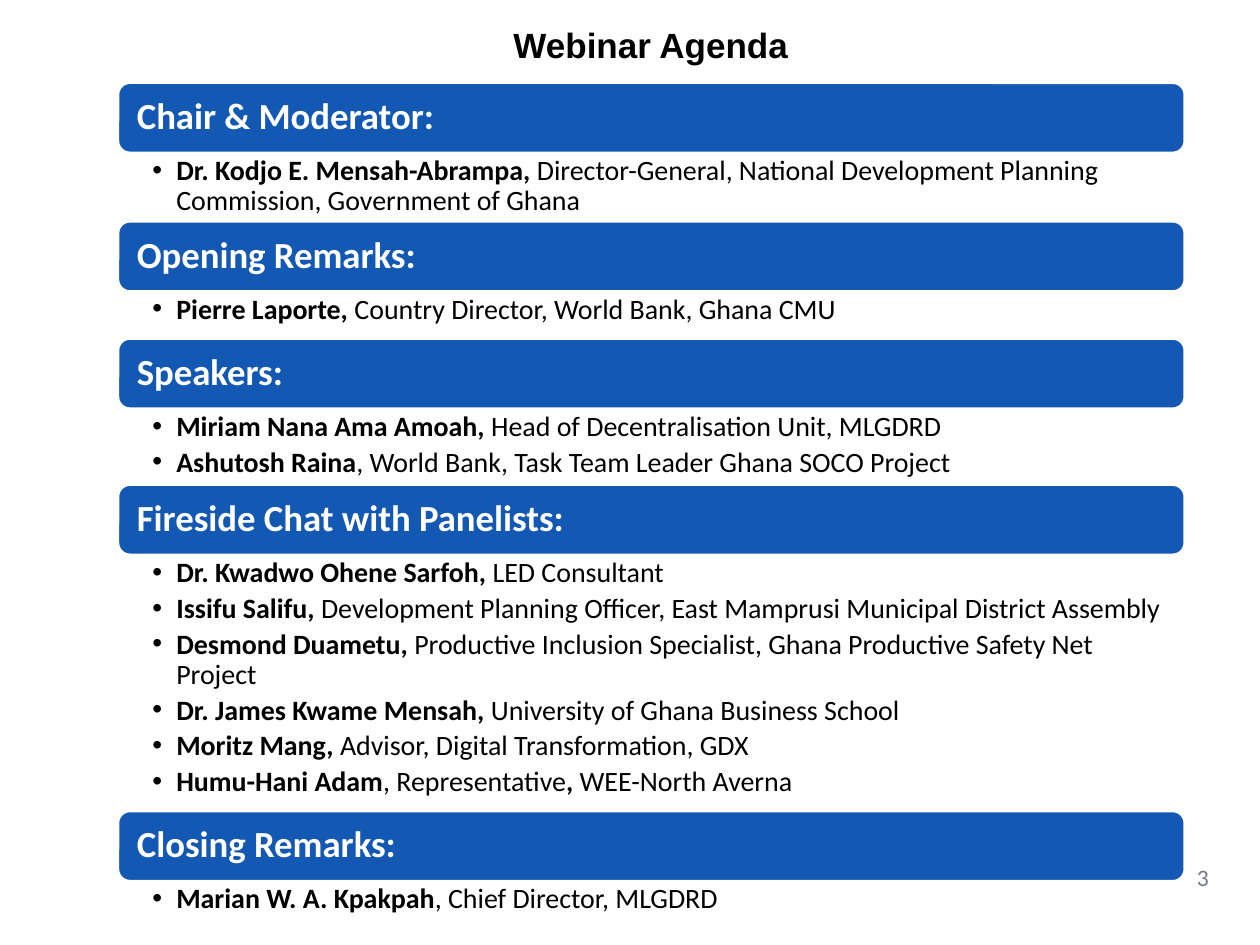
"""Build the webinar agenda slide: five headed sections with bulleted names."""
from dataclasses import dataclass

from lxml import etree
from pptx import Presentation
from pptx.dml.color import RGBColor
from pptx.enum.shapes import MSO_SHAPE
from pptx.enum.text import MSO_ANCHOR, MSO_AUTO_SIZE, PP_ALIGN
from pptx.oxml.ns import qn
from pptx.util import Pt

ROUNDED = MSO_SHAPE.ROUNDED_RECTANGLE
TOP, MIDDLE = MSO_ANCHOR.TOP, MSO_ANCHOR.MIDDLE
LEFT, CENTER = PP_ALIGN.LEFT, PP_ALIGN.CENTER
NO_FIT = MSO_AUTO_SIZE.NONE

COLORS = {"bar": "1359B4", "white": "FFFFFF", "text": "000000", "number": "747993"}
COMPARISON_LAYOUT = 4
SECTION_LEFT, SECTION_TOP, SECTION_WIDTH = 67.7, 47.5, 609.1
BAR_HEIGHT = 39.6
BULLET_INDENT = 13.7


@dataclass
class Section:
    """A heading, its list height, and entries of alternating bold and plain text."""
    heading: str
    list_height: float
    entries: list[tuple[str, ...]]


SECTIONS = [
    Section("Chair & Moderator:", 39.6, [
        ("Dr. Kodjo E. Mensah-Abrampa,",
         " Director-General, National Development Planning Commission, Government of Ghana"),
    ]),
    Section("Opening Remarks:", 27.4, [
        ("Pierre Laporte, ", "Country Director, World Bank, Ghana CMU"),
    ]),
    Section("Speakers:", 43.9, [
        ("Miriam Nana Ama Amoah, ", "Head of Decentralisation Unit, MLGDRD"),
        ("Ashutosh Raina", ", World Bank, Task Team Leader Ghana SOCO Project"),
    ]),
    Section("Fireside Chat with Panelists:", 146.9, [
        ("Dr. Kwadwo Ohene Sarfoh,", " LED Consultant"),
        ("Issifu Salifu,",
         " Development Planning Officer, East Mamprusi Municipal District Assembly"),
        ("Desmond Duametu,",
         " Productive Inclusion Specialist, Ghana Productive Safety Net Project"),
        ("Dr. James Kwame Mensah,", " University of Ghana Business School"),
        ("Moritz Mang, ", "Advisor, Digital Transformation, GDX"),
        ("Humu-Hani Adam", ", Representative", ",", " WEE-North Averna"),
    ]),
    Section("Closing Remarks:", 27.4, [
        ("Marian W. A. Kpakpah", ", Chief Director, MLGDRD"),
    ]),
]


def color(name: str) -> RGBColor:
    """Return a named colour."""
    return RGBColor.from_string(COLORS[name])


def place(box, left: float, top: float, width: float, height: float) -> None:
    """Move and size a box, in points."""
    box.left, box.top, box.width, box.height = map(Pt, (left, top, width, height))


def set_frame(box, anchor, left: float, top: float, right: float, bottom: float):
    """Set anchor and margins, and return the text frame."""
    frame = box.text_frame
    frame.word_wrap = True
    frame.auto_size = NO_FIT
    frame.vertical_anchor = anchor
    frame.margin_left, frame.margin_top = Pt(left), Pt(top)
    frame.margin_right, frame.margin_bottom = Pt(right), Pt(bottom)
    return frame


def add_span(para, text: str, size: float, tint: str, bold: bool = False,
             font: str = "Calibri") -> None:
    """Add one formatted run."""
    span = para.add_run()
    span.text = text
    span.font.name, span.font.size, span.font.bold = font, Pt(size), bold
    span.font.color.rgb = color(tint)


def set_bullet(para) -> None:
    """Give a paragraph a round bullet with a hanging indent."""
    properties = para._p.get_or_add_pPr()
    properties.set("marL", str(Pt(BULLET_INDENT)))
    properties.set("indent", str(-Pt(BULLET_INDENT)))
    tint = etree.SubElement(properties, qn("a:buClr"))
    etree.SubElement(tint, qn("a:srgbClr"), val=COLORS["text"])
    etree.SubElement(properties, qn("a:buFont"), typeface="Arial")
    etree.SubElement(properties, qn("a:buChar"), char="•")


def draw_bar(page, section: Section, top: float) -> None:
    """Draw a section's heading bar."""
    bar = page.shapes.add_shape(ROUNDED, Pt(SECTION_LEFT), Pt(top),
                                Pt(SECTION_WIDTH), Pt(BAR_HEIGHT))
    bar.shadow.inherit = False
    bar.fill.solid()
    bar.fill.fore_color.rgb = color("bar")
    bar.line.color.rgb = color("white")
    bar.line.width = Pt(1)
    para = set_frame(bar, MIDDLE, 8.6, 6.5, 8.6, 6.5).paragraphs[0]
    para.alignment = LEFT
    para.line_spacing = 0.9
    add_span(para, section.heading, 21, "white", bold=True)


def write_list(box, section: Section, top: float) -> None:
    """Fill a box with a section's bulleted entries."""
    place(box, SECTION_LEFT, top, SECTION_WIDTH, section.list_height)
    frame = set_frame(box, TOP, 19.4, 2.2, 11.5, 2.2)
    for index, entry in enumerate(section.entries):
        para = frame.add_paragraph() if index else frame.paragraphs[0]
        para.alignment = LEFT
        para.line_spacing = 0.9
        para.space_before, para.space_after = Pt(0), Pt(3.2)
        set_bullet(para)
        for position, text in enumerate(entry):
            add_span(para, text, 16, "text", bold=position % 2 == 0)


def write_title(page) -> None:
    """Write the slide title."""
    title = page.shapes.title
    place(title, 272.2, 9.4, 199.4, 31.7)
    para = set_frame(title, MIDDLE, 7.2, 3.6, 7.2, 3.6).paragraphs[0]
    para.alignment = CENTER
    add_span(para, "Webinar Agenda", 20, "text", bold=True, font="Arial")


def write_page_number(page) -> None:
    """Write the page number at the lower right."""
    box = page.shapes.add_textbox(Pt(676.8), Pt(489.6), Pt(43.2), Pt(41))
    para = set_frame(box, TOP, 7.2, 3.6, 7.2, 3.6).paragraphs[0]
    add_span(para, "3", 13.5, "number")


def main() -> None:
    """Build and save the deck."""
    deck = Presentation()
    deck.slide_width, deck.slide_height = Pt(720), Pt(540)
    page = deck.slides.add_slide(deck.slide_layouts[COMPARISON_LAYOUT])
    write_title(page)
    boxes = [box for box in page.placeholders if box.placeholder_format.idx]
    while len(boxes) < len(SECTIONS):
        boxes.append(page.shapes.add_textbox(0, 0, 0, 0))
    top = SECTION_TOP
    for section, box in zip(SECTIONS, boxes):
        draw_bar(page, section, top)
        write_list(box, section, top + BAR_HEIGHT)
        top += BAR_HEIGHT + section.list_height
    write_page_number(page)
    deck.save("out.pptx")


if __name__ == "__main__":
    main()
